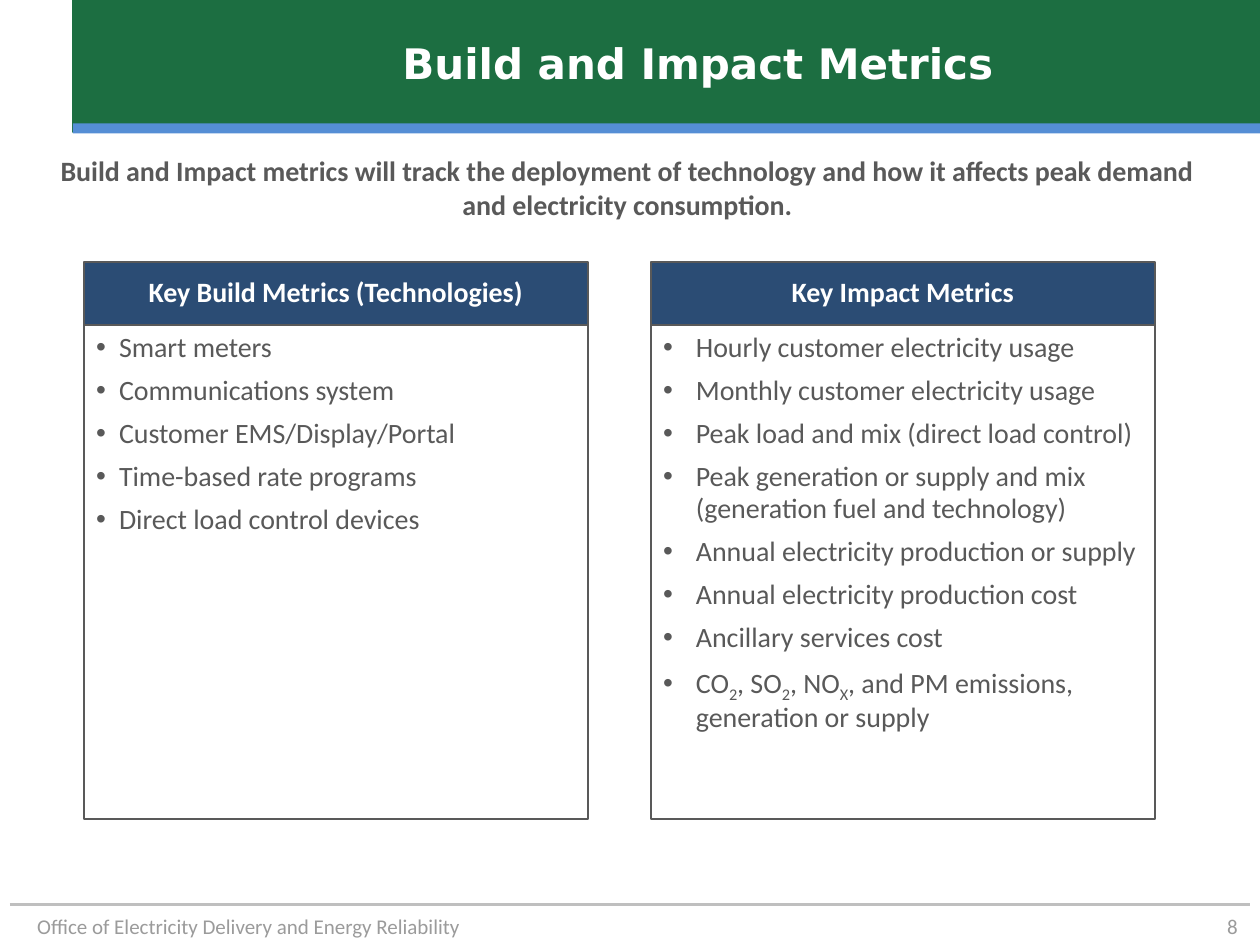
import lxml.etree
import pptx
import pptx.dml.color
import pptx.enum.shapes
import pptx.enum.text
import pptx.oxml.ns
import pptx.util

Cm = pptx.util.Cm
Pt = pptx.util.Pt
ALIGN = pptx.enum.text.PP_ALIGN
ANCHOR = pptx.enum.text.MSO_ANCHOR

COLORS = {
    "green": "1C6E41",
    "blue": "558ED5",
    "navy": "2B4C74",
    "text": "595959",
    "rule": "BFBFBF",
    "footer": "9B9B9B",
    "white": "FFFFFF",
}

PANEL_WIDTH = 10.16
HEADER_TOP = 5.29
HEADER_HEIGHT = 1.27
LIST_HEIGHT = 9.95

BUILD_METRICS = [
    "Smart meters",
    "Communications system",
    "Customer EMS/Display/Portal",
    "Time-based rate programs",
    "Direct load control devices",
]
IMPACT_METRICS = [
    "Hourly customer electricity usage",
    "Monthly customer electricity usage",
    "Peak load and mix (direct load control)",
    "Peak generation or supply and mix (generation fuel and technology)",
    "Annual electricity production or supply",
    "Annual electricity production cost",
    "Ancillary services cost",
    ["CO", "2", ", SO", "2", ", NO", "X", ", and PM emissions, generation or supply"],
]


def color(name):
    return pptx.dml.color.RGBColor.from_string(COLORS[name])


def add_rectangle(slide, left, top, width, height, fill=None, line=None):
    shape = slide.shapes.add_shape(
        pptx.enum.shapes.MSO_SHAPE.RECTANGLE, Cm(left), Cm(top), Cm(width), Cm(height)
    )
    shape.shadow.inherit = False
    if fill:
        shape.fill.solid()
        shape.fill.fore_color.rgb = color(fill)
    else:
        shape.fill.background()
    if line:
        shape.line.color.rgb = color(line)
        shape.line.width = Pt(1)
    else:
        shape.line.fill.background()
    return shape


def add_rule(slide, left, right, top):
    connector = slide.shapes.add_connector(
        pptx.enum.shapes.MSO_CONNECTOR.STRAIGHT, Cm(left), Cm(top), Cm(right), Cm(top)
    )
    connector.line.color.rgb = color("rule")
    connector.line.width = Pt(1.75)
    properties = connector._element.spPr
    lxml.etree.SubElement(properties, pptx.oxml.ns.qn("a:effectLst"))


def add_run(paragraph, text, size, fill, bold=False, font="Calibri"):
    run = paragraph.add_run()
    run.text = text
    run.font.size = Pt(size)
    run.font.name = font
    run.font.bold = bold
    run.font.color.rgb = color(fill)
    return run


def add_text(slide, left, top, width, height, text, size, fill,
             alignment=ALIGN.CENTER, anchor=ANCHOR.TOP, bold=False, font="Calibri"):
    shape = slide.shapes.add_textbox(Cm(left), Cm(top), Cm(width), Cm(height))
    frame = shape.text_frame
    frame.word_wrap = True
    frame.vertical_anchor = anchor
    paragraph = frame.paragraphs[0]
    paragraph.alignment = alignment
    add_run(paragraph, text, size, fill, bold, font)


def set_bullet(paragraph, indent):
    properties = paragraph._p.get_or_add_pPr()
    properties.set("marL", str(Cm(indent)))
    properties.set("indent", str(-Cm(indent)))
    font = lxml.etree.SubElement(properties, pptx.oxml.ns.qn("a:buFont"))
    font.set("typeface", "Arial")
    bullet = lxml.etree.SubElement(properties, pptx.oxml.ns.qn("a:buChar"))
    bullet.set("char", "•")


def add_metric_list(slide, left, metrics, indent):
    shape = add_rectangle(
        slide, left, HEADER_TOP + HEADER_HEIGHT, PANEL_WIDTH, LIST_HEIGHT, line="text"
    )
    frame = shape.text_frame
    frame.word_wrap = True
    frame.vertical_anchor = ANCHOR.TOP
    for index, metric in enumerate(metrics):
        paragraph = frame.add_paragraph() if index else frame.paragraphs[0]
        set_bullet(paragraph, indent)
        paragraph.alignment = ALIGN.LEFT
        paragraph.line_spacing = 0.95
        if index:
            paragraph.space_before = Pt(6.4)
        parts = [metric] if isinstance(metric, str) else metric
        for position, part in enumerate(parts):
            run = add_run(paragraph, part, 16, "text")
            if position % 2:
                run._r.get_or_add_rPr().set("baseline", "-25000")


def add_panel(slide, left, heading, metrics, indent):
    add_metric_list(slide, left, metrics, indent)
    header = add_rectangle(
        slide, left, HEADER_TOP, PANEL_WIDTH, HEADER_HEIGHT, "navy", "text"
    )
    frame = header.text_frame
    frame.word_wrap = True
    frame.margin_top = frame.margin_bottom = 0
    frame.vertical_anchor = ANCHOR.MIDDLE
    paragraph = frame.paragraphs[0]
    paragraph.alignment = ALIGN.CENTER
    paragraph.line_spacing = 0.9
    add_run(paragraph, heading, 16, "white", bold=True)


def main():
    presentation = pptx.Presentation()
    presentation.slide_width = Cm(25.4)
    presentation.slide_height = Cm(19.05)
    slide = presentation.slides.add_slide(presentation.slide_layouts[6])

    add_rectangle(slide, 1.47, 0, 23.93, 2.67, "green", "green")
    add_rectangle(slide, 1.47, 2.49, 23.93, 0.2, "blue")
    add_text(slide, 0, 18.29, 9.53, 0.76,
             "Office of Electricity Delivery and Energy Reliability",
             12, "footer", ALIGN.RIGHT)
    add_rule(slide, 0.2, 25.2, 18.24)
    add_text(slide, 18.85, 18.31, 6.35, 0.74, "8", 12, "footer",
             ALIGN.RIGHT, ANCHOR.MIDDLE)
    add_text(slide, 2.74, 0, 22.66, 2.54, "Build and Impact Metrics", 24, "white",
             anchor=ANCHOR.MIDDLE, bold=True, font="DejaVu Sans")
    add_text(slide, 0.84, 2.97, 23.62, 1.7,
             "Build and Impact metrics will track the deployment of technology "
             "and how it affects peak demand and electricity consumption.",
             16, "text", bold=True)
    add_panel(slide, 1.69, "Key Build Metrics (Technologies)", BUILD_METRICS, 0.46)
    add_panel(slide, 13.12, "Key Impact Metrics", IMPACT_METRICS, 0.66)

    presentation.save("out.pptx")


if __name__ == "__main__":
    main()
